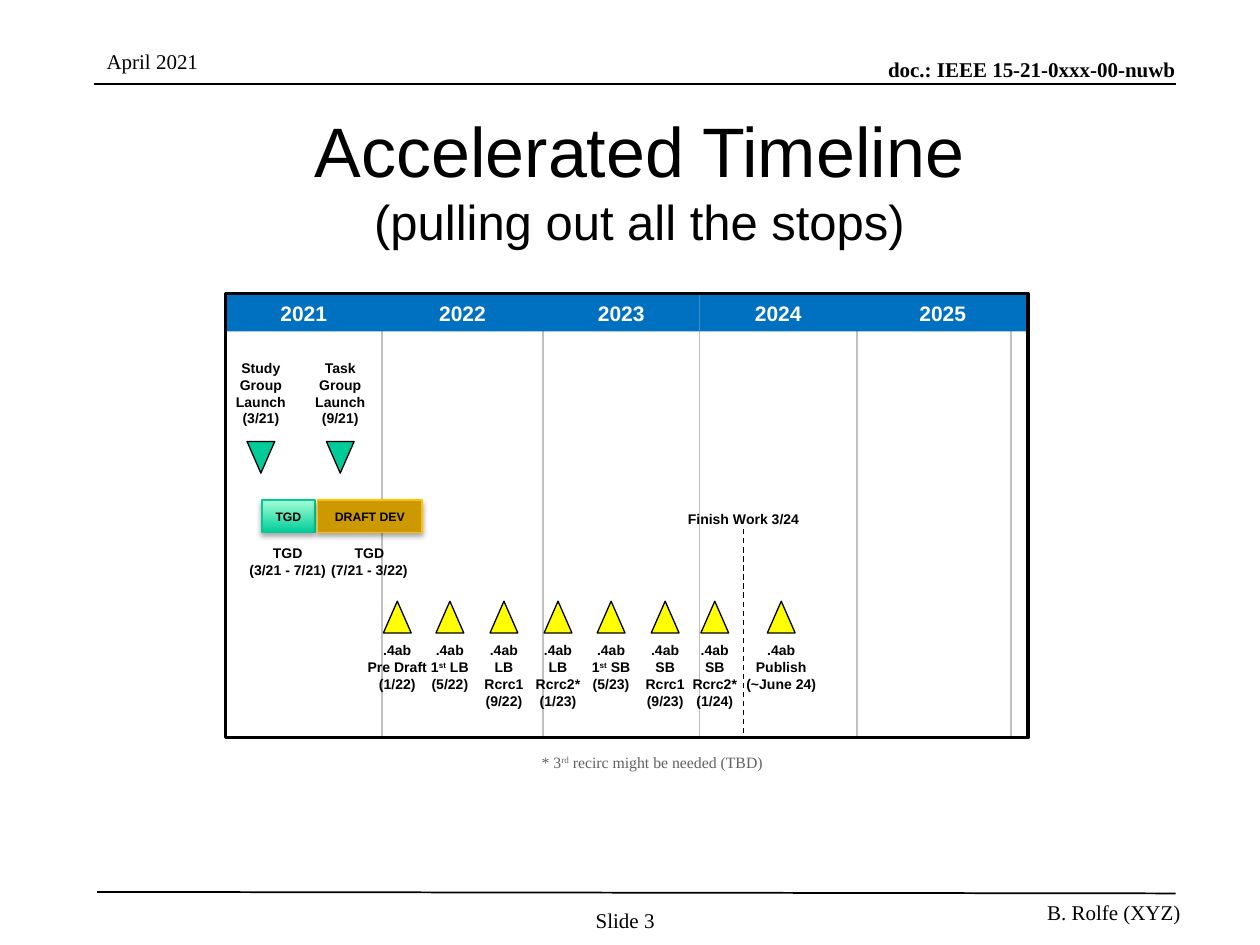
"""Build the accelerated timeline slide."""
from lxml import etree
from pptx import Presentation
from pptx.dml.color import RGBColor
from pptx.enum.dml import MSO_LINE
from pptx.enum.shapes import MSO_CONNECTOR, MSO_SHAPE
from pptx.enum.text import MSO_ANCHOR, PP_ALIGN
from pptx.oxml.ns import qn
from pptx.util import Cm, Pt

RECT, TRIANGLE = MSO_SHAPE.RECTANGLE, MSO_SHAPE.ISOSCELES_TRIANGLE
STRAIGHT, DASH = MSO_CONNECTOR.STRAIGHT, MSO_LINE.DASH
LEFT, CENTER, RIGHT = PP_ALIGN.LEFT, PP_ALIGN.CENTER, PP_ALIGN.RIGHT
TOP, MIDDLE, BOTTOM = MSO_ANCHOR.TOP, MSO_ANCHOR.MIDDLE, MSO_ANCHOR.BOTTOM
BLACK = RGBColor(0, 0, 0)
WHITE = RGBColor(0xFF, 0xFF, 0xFF)
SILVER = RGBColor(0xC0, 0xC0, 0xC0)
GRAY = RGBColor(0x60, 0x60, 0x60)
BLUE = RGBColor(0x00, 0x70, 0xC0)
GREEN = RGBColor(0x00, 0xCC, 0x99)
MINT = RGBColor(0xA5, 0xFF, 0xD6)
GREEN_EDGE = RGBColor(0x00, 0xC8, 0x96)
OCHRE = RGBColor(0xCC, 0x99, 0x00)
AMBER = RGBColor(0xFF, 0xC0, 0x00)
YELLOW = RGBColor(0xFF, 0xFF, 0x00)
SANS, SERIF = "Arial", "Times New Roman"
INSET, TIGHT, NONE = (0.25, 0.13), (0.23, 0.11), (0, 0)

TITLE = [("Accelerated Timeline", 40), ("(pulling out all the stops)", 28)]
MARGIN_TEXTS = [
    ("doc.: IEEE 15-21-0xxx-00-nuwb", (12.7, 1.14, 11, 0.51), RIGHT, BOTTOM, NONE, True),
    ("April 2021", (1.9, 0.84, 4.88, 0.79), LEFT, TOP, INSET, False),
    ("B. Rolfe (XYZ)", (13.64, 18.01, 10.41, 0.79), RIGHT, TOP, INSET, False),
    ("Slide 3", (11.76, 18.16, 1.83, 0.66), LEFT, TOP, INSET, False),
]
RULES = [(1.9, 1.7, 23.7, 1.7), (1.96, 17.98, 23.7, 18.01)]
YEARS = ["2021", "2022", "2023", "2024", "2025"]
YEAR_EDGES = [4.55, 7.7, 10.95, 14.1, 17.28, 20.73]
LAST_GRID_X = 20.38
FRAME_TOP, FRAME_BOTTOM, YEAR_H = 5.92, 14.87, 0.76
LAUNCHES = [
    (5.26, "Study Group\nLaunch\n(3/21)"),
    (6.86, "Task\nGroup\nLaunch\n(9/21)"),
]
BARS = [
    ("TGD", 5.28, 1.07, (GREEN, MINT), GREEN_EDGE),
    ("DRAFT DEV", 6.4, 2.11, (OCHRE,), AMBER),
]
BAR_LABELS = [(5.8, "TGD\n(3/21 - 7/21)"), (7.45, "TGD\n(7/21 - 3/22)")]
BALLOTS = [
    (8.01, 1.68, ".4ab\nPre Draft\n(1/22)"),
    (9.07, 1.27, ".4ab\n1^st^ LB\n(5/22)"),
    (10.16, 1.27, ".4ab\nLB\nRcrc1\n(9/22)"),
    (11.25, 1.37, ".4ab\nLB\nRcrc2*\n(1/23)"),
    (12.32, 1.27, ".4ab\n1^st^ SB\n(5/23)"),
    (13.41, 1.27, ".4ab\nSB\nRcrc1\n(9/23)"),
    (14.41, 1.37, ".4ab\nSB\nRcrc2*\n(1/24)"),
    (15.75, 1.88, ".4ab\nPublish\n(~June 24)"),
]
FINISH_X, FINISH_TEXT = 14.99, "Finish Work 3/24"
FOOTNOTE = "* 3^rd^ recirc might be needed (TBD)"


def write(sp, lines, color=BLACK, font=SANS, bold=False, align=CENTER,
          anchor=TOP, inset=INSET, wrap=True):
    """Fill a shape with (text, size) lines; ^ marks enclose superscripts."""
    tf = sp.text_frame
    tf.word_wrap, tf.vertical_anchor = wrap, anchor
    tf.margin_left = tf.margin_right = Cm(inset[0])
    tf.margin_top = tf.margin_bottom = Cm(inset[1])
    for i, (text, size) in enumerate(lines):
        p = tf.add_paragraph() if i else tf.paragraphs[0]
        p.alignment = align
        for j, piece in enumerate(text.split("^")):
            r = p.add_run()
            r.text = piece
            r.font.name, r.font.size, r.font.bold = font, Pt(size), bold
            r.font.color.rgb = color
            if j % 2:
                r.font._element.set("baseline", "30000")


def add_text(s, box, lines, **style):
    """Add a text box."""
    write(s.shapes.add_textbox(*map(Cm, box)), lines, **style)


def add_label(s, center, top, width, text, rows=None, wrap=False):
    """Add a small bold label centred on a position."""
    lines = [(line, 8) for line in text.split("\n")]
    height = 0.34 * (rows or len(lines)) + 0.22
    add_text(s, (center - width / 2, top, width, height), lines,
             bold=True, inset=TIGHT, wrap=wrap)


def add_box(s, kind, box, fills=(), edge=None, weight=0.75):
    """Add a preset shape with no, solid or gradient fill."""
    sp = s.shapes.add_shape(kind, *map(Cm, box))
    sp.shadow.inherit = False
    if len(fills) > 1:
        sp.fill.gradient()
        sp.fill.gradient_angle = 90
        for stop, color in zip(sp.fill.gradient_stops, fills):
            stop.color.rgb = color
    elif fills:
        sp.fill.solid()
        sp.fill.fore_color.rgb = fills[0]
    else:
        sp.fill.background()
    if edge is None:
        sp.line.fill.background()
    else:
        sp.line.color.rgb, sp.line.width = edge, Pt(weight)
    return sp


def add_marker(s, center, top, color, down=False):
    """Add a milestone triangle."""
    sp = add_box(s, TRIANGLE, (center - 0.28, top, 0.56, 0.64), (color,), BLACK)
    if down:
        sp._element.spPr.get_or_add_xfrm().set("flipV", "1")


def add_line(s, ends, color=BLACK, weight=1, dash=None):
    """Add a straight line."""
    line = s.shapes.add_connector(STRAIGHT, *map(Cm, ends))
    line.line.color.rgb, line.line.width = color, Pt(weight)
    if dash is not None:
        line.line.dash_style = dash
    etree.SubElement(line._element.spPr, qn("a:effectLst"))


def add_shadow(sp):
    """Give a bar a soft shadow below."""
    effects = sp._element.spPr.find(qn("a:effectLst"))
    shadow = etree.SubElement(effects, qn("a:outerShdw"), blurRad=str(Pt(3.1)),
                              dist=str(Pt(1.8)), dir="5400000", rotWithShape="0")
    color = etree.SubElement(shadow, qn("a:srgbClr"), val=str(BLACK))
    etree.SubElement(color, qn("a:alpha"), val="35000")


def main():
    """Assemble and save the slide."""
    prs = Presentation()
    prs.slide_width, prs.slide_height = Cm(25.4), Cm(19.05)
    s = prs.slides.add_slide(prs.slide_layouts[6])

    for text, box, align, anchor, inset, bold in MARGIN_TEXTS:
        add_text(s, box, [(text, 12)], font=SERIF, bold=bold, align=align,
                 anchor=anchor, inset=inset)
    for ends in RULES:
        add_line(s, ends)
    add_text(s, (2.11, 1.9, 21.56, 3.4), TITLE, anchor=MIDDLE)

    for x in YEAR_EDGES[1:-1] + [LAST_GRID_X]:
        add_line(s, (x, FRAME_TOP + YEAR_H, x, FRAME_BOTTOM), SILVER)
    for year, x, end in zip(YEARS, YEAR_EDGES, YEAR_EDGES[1:]):
        sp = add_box(s, RECT, (x, FRAME_TOP, end - x, YEAR_H), (BLUE,))
        write(sp, [(year, 12)], WHITE, bold=True)
    left, right = YEAR_EDGES[0], YEAR_EDGES[-1]
    add_box(s, RECT, (left, FRAME_TOP, right - left, FRAME_BOTTOM - FRAME_TOP),
            edge=BLACK, weight=2)

    for x, text in LAUNCHES:
        add_label(s, x, 7.14, 2.13, text, rows=4, wrap=True)
        add_marker(s, x, 8.9, GREEN, down=True)
    for text, x, width, fills, edge in BARS:
        sp = add_box(s, RECT, (x, 10.08, width, 0.66), fills, edge)
        add_shadow(sp)
        write(sp, [(text, 7)], bold=True, anchor=MIDDLE)
    for x, text in BAR_LABELS:
        add_label(s, x, 10.87, 2.06, text)
    for x, width, text in BALLOTS:
        add_marker(s, x, 12.12, YELLOW)
        add_label(s, x, 12.83, width, text)

    add_line(s, (FINISH_X, 10.67, FINISH_X, 14.86), weight=0.75, dash=DASH)
    add_label(s, FINISH_X, 10.19, 2.74, FINISH_TEXT)
    add_text(s, (10.67, 15.04, 5.03, 0.64), [(FOOTNOTE, 9)], color=GRAY,
             font=SERIF, align=LEFT, wrap=False)
    prs.save("out.pptx")


if __name__ == "__main__":
    main()
